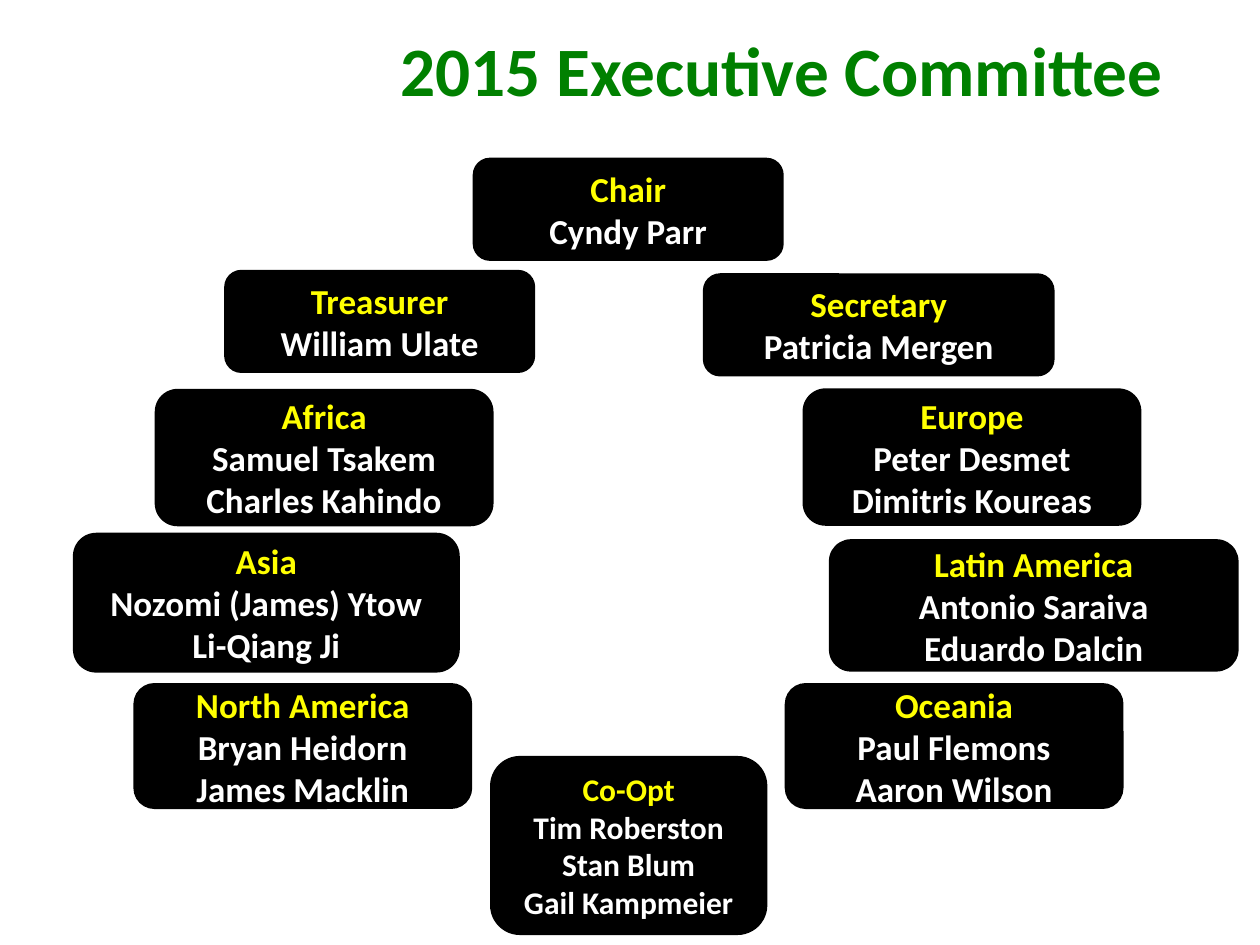
from pptx import Presentation
from pptx.dml.color import RGBColor
from pptx.enum.shapes import MSO_SHAPE
from pptx.enum.text import MSO_ANCHOR, PP_ALIGN
from pptx.util import Cm, Pt

COLORS = {"title": "008000", "box": "000000", "role": "FFFF00", "name": "FFFFFF"}

BOXES = [
    ("Co-Opt", ["Tim Roberston", "Stan Blum", "Gail Kampmeier"], (9.88, 15.24, 5.59, 3.61), 18),
    ("Asia", ["Nozomi (James) Ytow", "Li-Qiang Ji"], (1.47, 10.74, 7.8, 2.82), 20),
    ("Europe", ["Peter Desmet", "Dimitris Koureas"], (16.18, 7.83, 6.83, 2.77), 20),
    ("Latin America", ["Antonio Saraiva", "Eduardo Dalcin"], (16.71, 10.87, 8.26, 2.67), 20),
    ("North America", ["Bryan Heidorn", "James Macklin"], (2.69, 13.77, 6.83, 2.54), 20),
    ("Oceania", ["Paul Flemons", "Aaron Wilson"], (15.82, 13.77, 6.83, 2.54), 20),
    ("Africa", ["Samuel Tsakem", "Charles Kahindo"], (3.12, 7.84, 6.83, 2.77), 20),
    ("Chair", ["Cyndy Parr"], (9.53, 3.18, 6.27, 2.08), 20),
    ("Treasurer", ["William Ulate"], (4.52, 5.44, 6.27, 2.08), 20),
    ("Secretary", ["Patricia Mergen"], (14.17, 5.51, 7.09, 2.08), 20),
]


def write(para, text, size=20, color="name", align=PP_ALIGN.CENTER, font="Calibri"):
    para.alignment = align
    run = para.add_run()
    run.text = text
    run.font.name = font
    run.font.size = Pt(size)
    run.font.bold = True
    run.font.color.rgb = RGBColor.from_string(COLORS[color])


class Chart:
    def __init__(self, deck):
        self.slide = deck.slides.add_slide(deck.slide_layouts[5])

    def title(self, text, place):
        shape = self.slide.shapes.title
        shape.left, shape.top, shape.width, shape.height = map(Cm, place)
        shape.text_frame.vertical_anchor = MSO_ANCHOR.MIDDLE
        write(shape.text_frame.paragraphs[0], text, size=39.6, color="title",
              align=PP_ALIGN.LEFT)

    def box(self, role, names, place, size):
        shape = self.slide.shapes.add_shape(MSO_SHAPE.ROUNDED_RECTANGLE, *map(Cm, place))
        shape.shadow.inherit = False
        shape.fill.solid()
        shape.fill.fore_color.rgb = RGBColor.from_string(COLORS["box"])
        shape.line.fill.background()
        frame = shape.text_frame
        frame.word_wrap = True
        frame.vertical_anchor = MSO_ANCHOR.MIDDLE
        write(frame.paragraphs[0], role, size=size, color="role")
        for name in names:
            write(frame.add_paragraph(), name, size=size)


def main():
    deck = Presentation()
    deck.slide_width, deck.slide_height = Cm(25.4), Cm(19.05)
    chart = Chart(deck)
    chart.title("2015 Executive Committee", (7.82, -0.2, 16.31, 3.18))
    for entry in BOXES:
        chart.box(*entry)
    deck.save("out.pptx")


if __name__ == "__main__":
    main()
